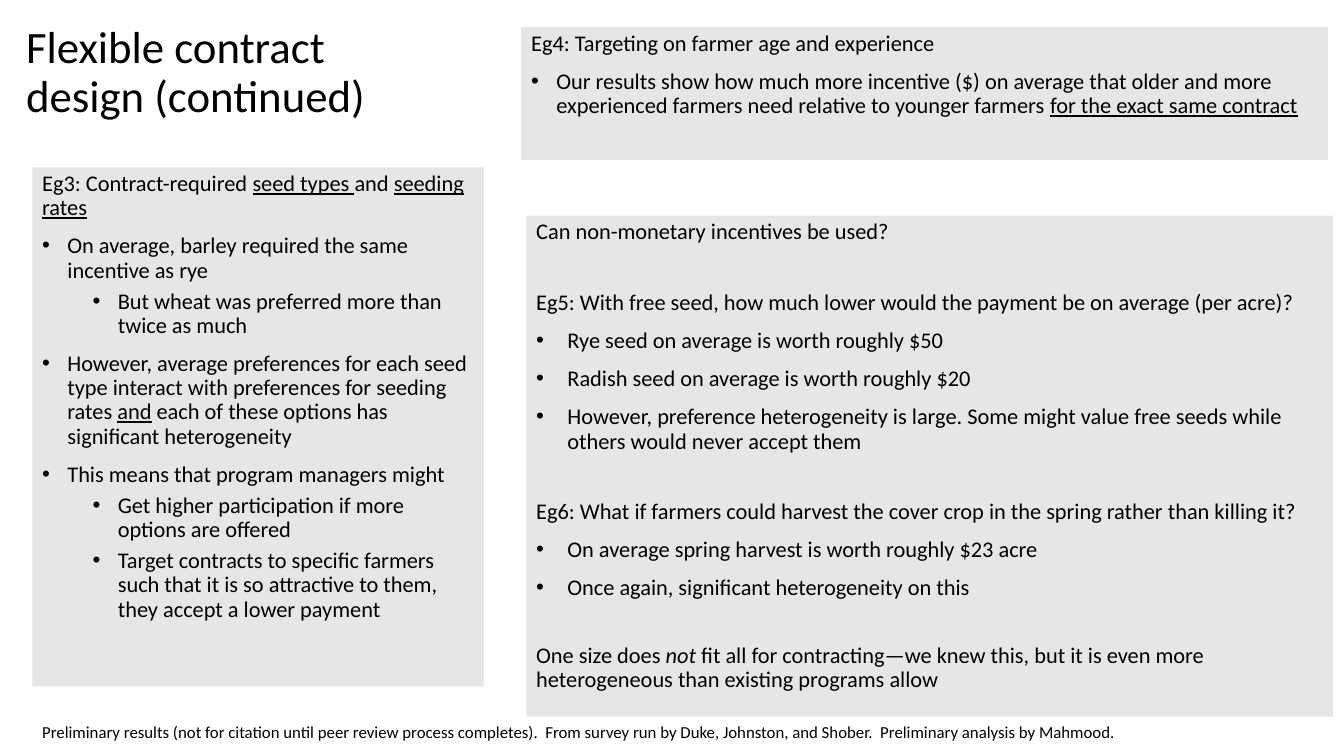
import dataclasses

import lxml.etree
import pptx
import pptx.dml.color
import pptx.enum.shapes
import pptx.enum.text
import pptx.oxml.ns
import pptx.util

Inches = pptx.util.Inches
FONT = "Calibri"
BLACK = "000000"
PANEL_GREY = "E7E6E6"


@dataclasses.dataclass(frozen=True)
class Span:
    text: str
    underline: bool = False
    italic: bool = False


@dataclasses.dataclass(frozen=True)
class Line:
    spans: tuple[Span, ...]
    indent: float = 0
    hanging: float = 0
    level: int = 0
    before: float = 10


@dataclasses.dataclass(frozen=True)
class Panel:
    left: float
    top: float
    width: float
    height: float
    lines: tuple[Line, ...]


def color(value: str) -> pptx.dml.color.RGBColor:
    return pptx.dml.color.RGBColor.from_string(value)


def as_spans(parts: tuple[str | Span, ...]) -> tuple[Span, ...]:
    return tuple(Span(part) if isinstance(part, str) else part for part in parts)


def heading(*parts: str | Span, before: float = 10) -> Line:
    return Line(as_spans(parts), before=before)


def bullet(*parts: str | Span, indent: float = 0.25) -> Line:
    return Line(as_spans(parts), indent=indent, hanging=indent)


def sub_bullet(*parts: str | Span) -> Line:
    return Line(as_spans(parts), indent=0.75, hanging=0.25, level=1, before=5)


def wide_bullet(text: str) -> Line:
    return bullet(text, indent=0.31)


def underlined(text: str) -> Span:
    return Span(text, underline=True)


def add_span(para, text: str, *, size: float, underline: bool = False, italic: bool = False) -> None:
    span = para.add_run()
    span.text = text
    span.font.name = FONT
    span.font.size = pptx.util.Pt(size)
    span.font.color.rgb = color(BLACK)
    if underline:
        span.font.underline = True
    if italic:
        span.font.italic = True


def add_bullet(para, indent: float, hanging: float) -> None:
    properties = para._p.get_or_add_pPr()
    properties.set("marL", str(Inches(indent)))
    properties.set("indent", str(-Inches(hanging)))
    qualified = pptx.oxml.ns.qn
    lxml.etree.SubElement(properties, qualified("a:buFont"), typeface="Arial")
    lxml.etree.SubElement(properties, qualified("a:buChar"), char="•")


def add_panel(page, panel: Panel) -> None:
    box = page.shapes.add_shape(
        pptx.enum.shapes.MSO_SHAPE.RECTANGLE,
        Inches(panel.left), Inches(panel.top), Inches(panel.width), Inches(panel.height),
    )
    box.shadow.inherit = False
    box.fill.solid()
    box.fill.fore_color.rgb = color(PANEL_GREY)
    box.line.fill.background()
    frame = box.text_frame
    frame.word_wrap = True
    frame.vertical_anchor = pptx.enum.text.MSO_ANCHOR.TOP
    for index, line in enumerate(panel.lines):
        para = frame.add_paragraph() if index else frame.paragraphs[0]
        para.alignment = pptx.enum.text.PP_ALIGN.LEFT
        para.level = line.level
        para.line_spacing = 0.9
        para.space_before = pptx.util.Pt(line.before)
        if line.hanging:
            add_bullet(para, line.indent, line.hanging)
        for span in line.spans:
            add_span(para, span.text, size=16, underline=span.underline, italic=span.italic)


def add_text(page, text: str, *, left: float, top: float, width: float, height: float,
             size: float, spacing: float = 1.0, bottom: bool = False) -> None:
    box = page.shapes.add_textbox(Inches(left), Inches(top), Inches(width), Inches(height))
    frame = box.text_frame
    frame.word_wrap = True
    anchors = pptx.enum.text.MSO_ANCHOR
    frame.vertical_anchor = anchors.BOTTOM if bottom else anchors.TOP
    para = frame.paragraphs[0]
    para.line_spacing = spacing
    add_span(para, text, size=size)


PANELS = (
    Panel(0.32, 1.66, 4.48, 5.15, (
        heading("Eg3: Contract-required ", underlined("seed types "), "and ", underlined("seeding rates")),
        bullet("On average, barley required the same incentive as rye"),
        sub_bullet("But wheat was preferred more than twice as much"),
        bullet(
            "However, average preferences for each seed type interact with preferences for seeding rates ",
            underlined("and"),
            " each of these options has significant heterogeneity",
        ),
        bullet("This means that program managers might"),
        sub_bullet("Get higher participation if more options are offered"),
        sub_bullet("Target contracts to specific farmers such that it is so attractive to them, "
                   "they accept a lower payment"),
    )),
    Panel(5.17, 0.27, 8, 1.32, (
        heading("Eg4: Targeting on farmer age and experience"),
        bullet(
            "Our results show how much more incentive ($) on average that older and more "
            "experienced farmers need relative to younger farmers ",
            underlined("for the exact same contract"),
        ),
    )),
    Panel(5.22, 2.14, 8, 4.97, (
        heading("Can non-monetary incentives be used?"),
        heading("Eg5: With free seed, how much lower would the payment be on average (per acre)?", before=33),
        wide_bullet("Rye seed on average is worth roughly $50"),
        wide_bullet("Radish seed on average is worth roughly $20"),
        wide_bullet("However, preference heterogeneity is large. Some might value free seeds "
                    "while others would never accept them"),
        heading("Eg6: What if farmers could harvest the cover crop in the spring rather than killing it?",
                before=33),
        wide_bullet("On average spring harvest is worth roughly $23 acre"),
        wide_bullet("Once again, significant heterogeneity on this"),
        heading(
            "One size does ", Span("not", italic=True),
            " fit all for contracting—we knew this, but it is even more heterogeneous "
            "than existing programs allow",
            before=31,
        ),
    )),
)


def main() -> None:
    deck = pptx.Presentation()
    deck.slide_width = Inches(13.33)
    deck.slide_height = Inches(7.5)
    page = deck.slides.add_slide(deck.slide_layouts[6])
    add_text(page, "Flexible contract design (continued)",
             left=0.16, top=0.09, width=4.3, height=1.17, size=32, spacing=0.9, bottom=True)
    for panel in PANELS:
        add_panel(page, panel)
    add_text(page, "Preliminary results (not for citation until peer review process completes).  "
             "From survey run by Duke, Johnston, and Shober.  Preliminary analysis by Mahmood.",
             left=0.32, top=7.11, width=12.7, height=0.3, size=12)
    deck.save("out.pptx")


if __name__ == "__main__":
    main()
